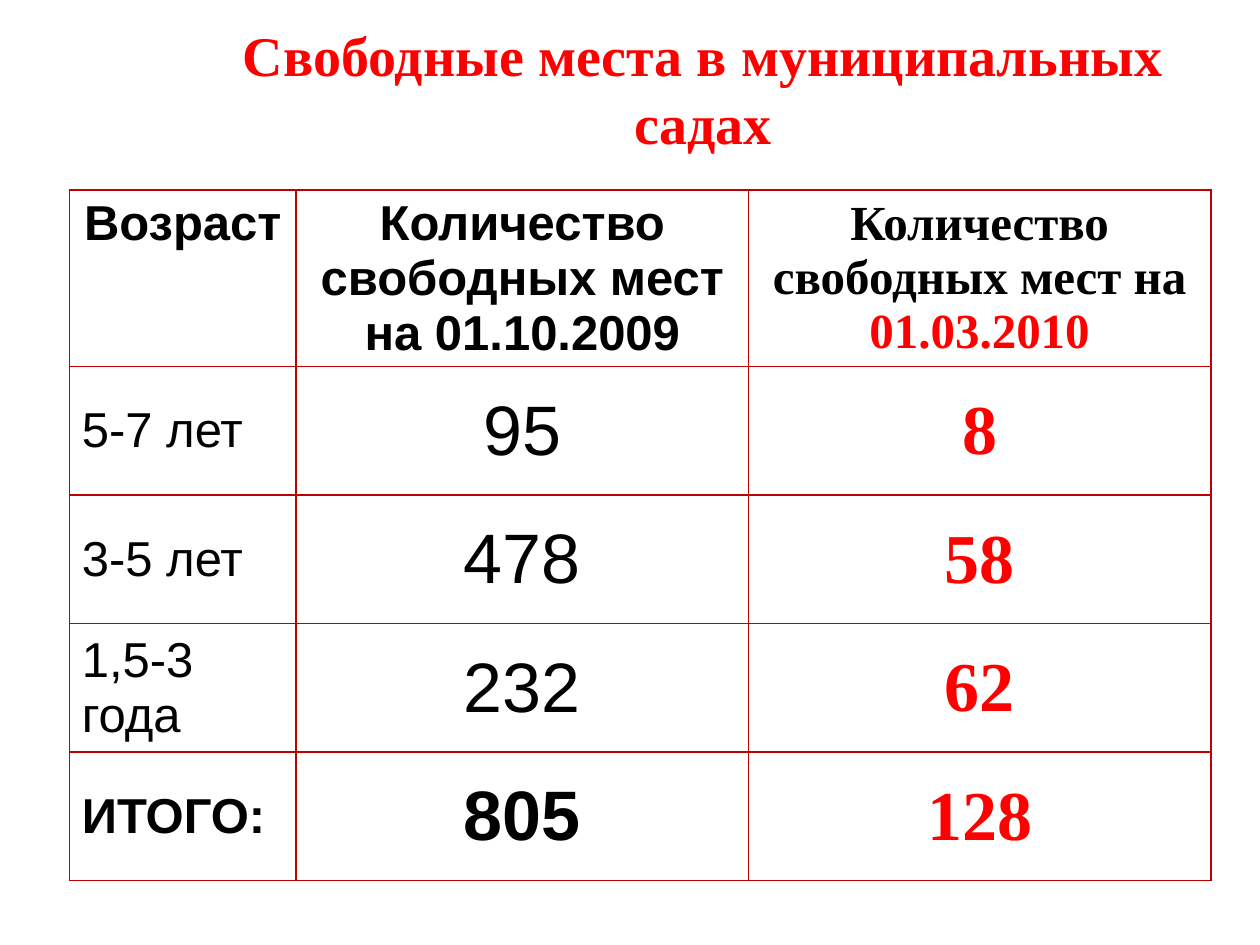
"""Build a slide with a table of free places in municipal kindergartens."""
from lxml.etree import SubElement
from pptx import Presentation
from pptx.dml.color import RGBColor
from pptx.enum.text import MSO_ANCHOR, PP_ALIGN
from pptx.oxml.ns import qn
from pptx.util import Inches, Pt

THEME = {
    "sans": "Arial", "serif": "Times New Roman",
    "black": "000000", "red": "FF0000", "border": "C00000",
    "title": 32, "label": 28, "number": 40, "line": 1,
}
TITLE = "Свободные места в муниципальных садах"
HEADERS = ["Возраст", "Количество свободных мест на 01.10.2009",
           "Количество свободных мест на "]
NEW_DATE = "01.03.2010"
ROWS = [
    ("5-7 лет", "95", "8"),
    ("3-5 лет", "478", "58"),
    ("1,5-3 года", "232", "62"),
    ("ИТОГО:", "805", "128"),
]
TITLE_BOX = (1.48, 0.23, 8.2, 0.94)
TABLE_ORIGIN = (0.55, 1.51)
COLUMN_WIDTHS = (1.8, 3.59, 3.67)
ROW_HEIGHTS = (1.4,) + (1.02,) * len(ROWS)


def add_span(para, text, size, face, color, bold):
    span = para.add_run()
    span.text = text
    formats = {"size": Pt(THEME[size]), "name": THEME[face], "bold": bold}
    for name, value in formats.items():
        setattr(span.font, name, value)
    span.font.color.rgb = RGBColor.from_string(THEME[color])


def style_cell(cell, anchor, align):
    cell.vertical_anchor = anchor
    cell.text_frame.paragraphs[0].alignment = align
    properties = cell._tc.get_or_add_tcPr()
    for side in ("lnL", "lnR", "lnT", "lnB"):
        line = SubElement(properties, qn(f"a:{side}"), w=str(Pt(THEME["line"])))
        fill = SubElement(line, qn("a:solidFill"))
        SubElement(fill, qn("a:srgbClr"), val=THEME["border"])
    cell.fill.background()


def add_title(page):
    box = page.shapes.title
    for name, value in zip(("left", "top", "width", "height"), TITLE_BOX):
        setattr(box, name, Inches(value))
    box.text_frame.vertical_anchor = MSO_ANCHOR.MIDDLE
    para = box.text_frame.paragraphs[0]
    para.alignment = PP_ALIGN.CENTER
    add_span(para, TITLE, "title", "serif", "red", True)


def add_places_table(page):
    frame = (*TABLE_ORIGIN, sum(COLUMN_WIDTHS), sum(ROW_HEIGHTS))
    table = page.shapes.add_table(len(ROW_HEIGHTS), len(COLUMN_WIDTHS),
                                  *map(Inches, frame)).table
    table.first_row = table.horz_banding = False
    for column, width in zip(table.columns, COLUMN_WIDTHS):
        column.width = Inches(width)
    for row, height in zip(table.rows, ROW_HEIGHTS):
        row.height = Inches(height)

    for column, text in enumerate(HEADERS):
        cell = table.cell(0, column)
        style_cell(cell, MSO_ANCHOR.TOP, PP_ALIGN.CENTER)
        face = "serif" if column == 2 else "sans"
        add_span(cell.text_frame.paragraphs[0], text, "label", face, "black", True)
    add_span(table.cell(0, 2).text_frame.paragraphs[0],
             NEW_DATE, "label", "serif", "red", True)

    columns = [("label", "sans", "black", PP_ALIGN.LEFT),
               ("number", "sans", "black", PP_ALIGN.CENTER),
               ("number", "serif", "red", PP_ALIGN.CENTER)]
    for row, values in enumerate(ROWS, start=1):
        for column, (text, look) in enumerate(zip(values, columns)):
            size, face, color, align = look
            cell = table.cell(row, column)
            style_cell(cell, MSO_ANCHOR.MIDDLE, align)
            bold = color == "red" or row == len(ROWS)
            add_span(cell.text_frame.paragraphs[0], text, size, face, color, bold)


def main():
    deck = Presentation()
    deck.slide_width, deck.slide_height = Inches(10), Inches(7.5)
    page = deck.slides.add_slide(deck.slide_layouts[5])
    add_title(page)
    add_places_table(page)
    deck.save("out.pptx")


if __name__ == "__main__":
    main()
